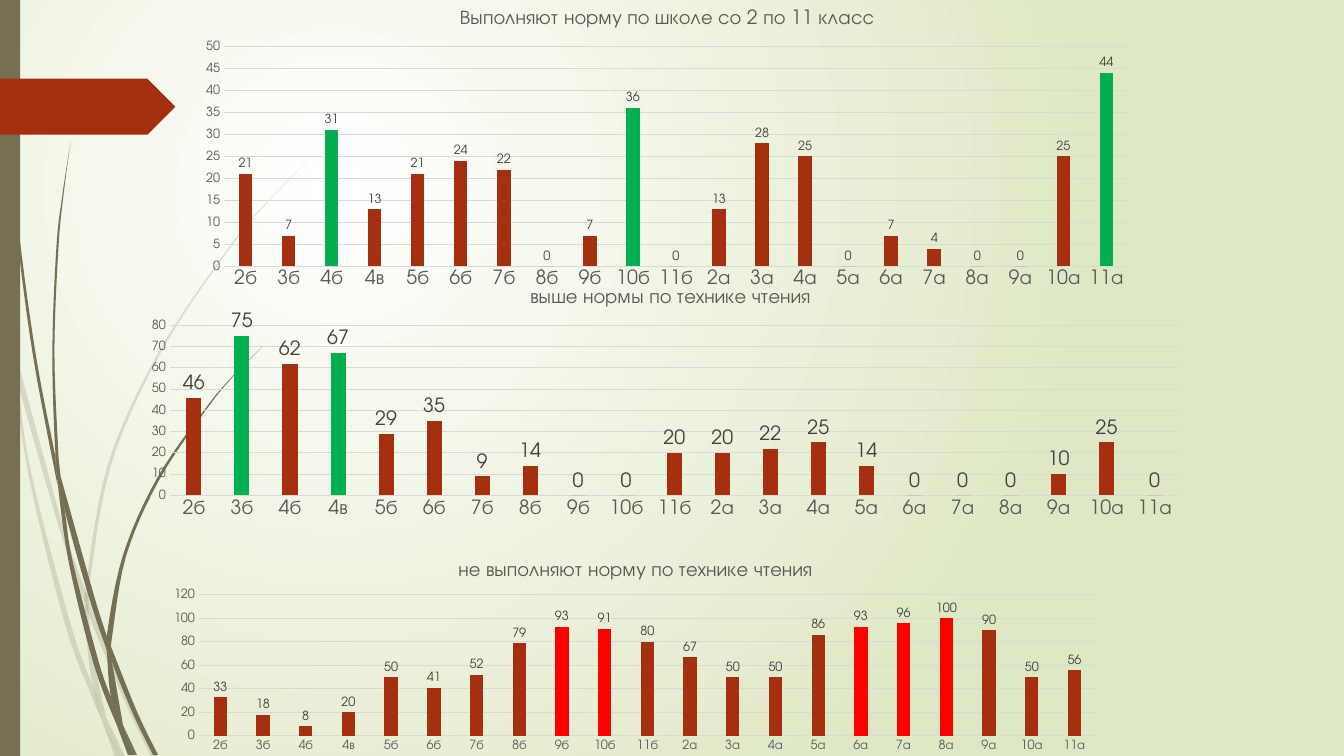
from lxml import etree
from pptx import Presentation
from pptx.chart.data import CategoryChartData
from pptx.dml.color import RGBColor
from pptx.enum.chart import XL_CHART_TYPE, XL_LABEL_POSITION, XL_TICK_MARK
from pptx.enum.shapes import MSO_SHAPE
from pptx.oxml import parse_xml
from pptx.oxml.ns import nsdecls, qn
from pptx.util import Pt

COLORS = {
    name: RGBColor.from_string(value)
    for name, value in {
        "white": "FFFFFF", "pale green": "DFE8C4", "olive": "766F54",
        "rust": "A53010", "green": "00B050", "red": "FF0000",
        "grid": "D9D9D9", "axis": "595959", "label": "404040",
    }.items()
}
FONT = "TeX Gyre Adventor"
CLASSES = [f"{grade}б" for grade in range(2, 12)] + [f"{grade}а" for grade in range(2, 12)]
CLASSES.insert(3, "4в")


def smooth(points, steps=6):
    """Return a Catmull-Rom curve through the points, in EMU."""
    padded = [points[0], *points, points[-1]]
    curve = []
    for a, b, c, d in zip(padded, padded[1:], padded[2:], padded[3:]):
        for step in range(steps):
            t = step / steps
            curve.append(tuple(
                Pt(0.5 * (2 * q + (r - p) * t + (2 * p - 5 * q + 4 * r - s) * t**2
                          + (3 * q - p - 3 * r + s) * t**3))
                for p, q, r, s in zip(a, b, c, d)
            ))
    return curve + [tuple(Pt(value) for value in points[-1])]


def write(frame, text, size, color):
    span = frame.paragraphs[0].add_run()
    span.text = text
    span.font.name = FONT
    span.font.size = Pt(size)
    span.font.bold = False
    span.font.color.rgb = COLORS[color]


deck = Presentation()
deck.slide_width, deck.slide_height = Pt(960), Pt(540)
page = deck.slides.add_slide(deck.slide_layouts[6])

# Background: glow centred in the upper left
backdrop = page.background.fill
backdrop.gradient()
for stop, color, position in zip(backdrop.gradient_stops, ("white", "pale green"), (0, 1)):
    stop.color.rgb = COLORS[color]
    stop.position = position
gradient = page._element.find(".//" + qn("a:gradFill"))
gradient.replace(gradient.find(qn("a:lin")), parse_xml(
    f'<a:path {nsdecls("a")} path="circle">'
    '<a:fillToRect l="50000" t="50000" r="100000" b="100000"/></a:path>'))

# Grass pieces: left edge downwards, right edge upwards
FAINT_GRASS = [
    ([(0, 215.3), (7.2, 247.7), (7.9, 252)], [(6.5, 231.8), (0, 203)]),
    ([(10.1, 248.4), (12.2, 270.7), (41.8, 375.8), (60.5, 431.3)],
     [(61.2, 421.9), (44.6, 374.4), (10.1, 248.4)]),
    ([(63.4, 429.1), (63.4, 439.2), (88.6, 499.7), (108, 540.7)],
     [(111.6, 540.7), (91.4, 498.2), (66.2, 437), (63.4, 429.1)]),
    ([(75.6, 511.9), (85.7, 540.7)], [(89.3, 540.7)]),
    ([(7.9, 252), (20.2, 338.4), (46.8, 447.1), (66.2, 499), (72.7, 514.1)],
     [(67, 491.8), (50.4, 445.7), (22.3, 337.7), (12.2, 270.7), (7.9, 252)]),
    ([(60.5, 431.3), (62.6, 465.1), (67, 491.8), (75.6, 511.9)],
     [(65.5, 465.1), (63.4, 439.2), (60.5, 431.3)]),
    ([(224.6, 110.2), (193, 141.8), (164.2, 175.7), (113.8, 250.6), (77, 331.9),
      (61.2, 420.5), (63.4, 429.1)],
     [(63.4, 420.5), (79.2, 332.6), (115.2, 251.3), (164.9, 176.4), (193, 142.6),
      (224.6, 110.2)]),
    ([(72.7, 514.1), (82.1, 540.7)], [(85.7, 540.7)]),
    ([(61.2, 421.9), (60.5, 431.3), (63.4, 439.2)], [(63.4, 429.1)]),
    ([(67, 491.8), (72.7, 514.1), (85.7, 540.7)], [(75.6, 511.9)]),
]
DARK_GRASS = [
    ([(2.2, 0), (5, 79.2), (12.2, 167.8), (23.8, 255.6), (41, 346.3)],
     [(39.6, 326.2), (25.9, 255.6), (13.7, 167), (5.8, 78.5), (2.9, 0)]),
    ([(43.2, 339.8), (46.1, 363.6), (63.4, 426.2), (76.3, 464.4)],
     [(76.3, 454.3), (67, 424.8), (43.2, 339.8)]),
    ([(79.2, 461.5), (79.9, 472.3), (95, 509.8), (109.4, 539.3)],
     [(113, 539.3), (97.9, 508.3), (79.2, 461.5)]),
    ([(41, 343.4), (49, 401), (67, 474.5), (84.2, 519.8)],
     [(79.2, 497.5), (70.6, 473), (51.8, 400.3), (46.1, 363.6), (41, 343.4)]),
    ([(50.4, 101.5), (44.6, 139), (40.3, 176.4), (37.4, 251.3), (39.6, 323.3), (43.2, 339.8)],
     [(41.8, 326.2), (38.9, 251.3), (41.8, 176.4), (45.4, 139), (50.4, 101.5)]),
    ([(87.8, 517.7), (95.8, 539.3)], [(97.9, 539.3)]),
    ([(39.6, 323.3), (39.6, 326.2), (41, 343.4), (46.1, 363.6)], [(43.2, 339.8)]),
    ([(187.2, 247.7), (166.3, 268.6), (146.9, 291.6), (112.3, 341.3), (87.8, 396.7),
      (76.3, 454.3), (79.2, 461.5)],
     [(79.9, 455.8), (90, 397.4), (113.8, 342.7), (147.6, 292.3), (166.3, 269.3),
      (187.2, 247.7)]),
    ([(84.2, 519.8), (91.4, 539.3)], [(94.3, 539.3)]),
    ([(76.3, 464.4), (79.2, 497.5), (87.8, 517.7)], [(79.9, 472.3), (76.3, 464.4)]),
    ([(76.3, 454.3), (76.3, 464.4), (79.9, 472.3)], [(79.2, 461.5)]),
    ([(79.2, 497.5), (84.2, 519.8), (93.6, 539.3)], [(95.8, 539.3), (87.8, 517.7)]),
]
for pieces, opacity in ((FAINT_GRASS, 20), (DARK_GRASS, 100)):
    for left_edge, right_edge in pieces:
        outline = smooth(left_edge) + smooth(right_edge)
        builder = page.shapes.build_freeform(*outline[0], scale=1.0)
        builder.add_line_segments(outline[1:], close=True)
        blade = builder.convert_to_shape()
        blade.shadow.inherit = False
        blade.fill.solid()
        blade.fill.fore_color.rgb = COLORS["olive"]
        blade.line.fill.background()
        tint = blade._element.spPr.find(".//" + qn("a:srgbClr"))
        etree.SubElement(tint, qn("a:alpha")).set("val", str(opacity * 1000))

# Side strip and page flag
for preset, color, place in [
    (MSO_SHAPE.RECTANGLE, "olive", (0, 0, 14.4, 540)),
    (MSO_SHAPE.PENTAGON, "rust", (0, 56.2, 125.3, 40)),
]:
    box = page.shapes.add_shape(preset, *map(Pt, place))
    box.shadow.inherit = False
    box.fill.solid()
    box.fill.fore_color.rgb = COLORS[color]
    box.line.fill.background()

# Reading charts; frame and plot are left, top, width, height
CHARTS = [
    dict(title="не выполняют норму по технике чтения",
         frame=(110.9, 390.2, 686.2, 149.8), plot=(142.1, 425, 640.7, 100.7),
         values=[33, 18, 8, 20, 50, 41, 52, 79, 93, 91, 80, 67, 50, 50, 86, 93, 96, 100, 90, 50, 56],
         accent="red", accented=(8, 9, 15, 16, 17),
         top=120, step=20, class_size=9, label_size=9),
    dict(title="выше нормы по технике чтения",
         frame=(93.6, 195.1, 763.9, 178.6), plot=(121.4, 232.5, 720.7, 121.4),
         values=[46, 75, 62, 67, 29, 35, 9, 14, 0, 0, 20, 20, 22, 25, 14, 0, 0, 0, 10, 25, 0],
         accent="green", accented=(1, 3), title_place=(0.37, 0.04),
         top=80, step=10, class_size=14, label_size=14),
    dict(title="Выполняют норму по школе со 2 по 11 класс",
         frame=(133.9, -5, 685.4, 216), plot=(160, 33.2, 645.7, 157.1),
         values=[21, 7, 31, 13, 21, 24, 22, 0, 7, 36, 0, 13, 28, 25, 0, 7, 4, 0, 0, 25, 44],
         accent="green", accented=(2, 9, 20),
         top=50, step=5, class_size=14, label_size=9),
]
for item in CHARTS:
    data = CategoryChartData(number_format="0")
    data.categories = CLASSES
    data.add_series("Series 1", item["values"])
    chart = page.shapes.add_chart(
        XL_CHART_TYPE.COLUMN_CLUSTERED, *map(Pt, item["frame"]), data).chart
    chart.has_legend = False
    chart.font.name = FONT
    chart.font.size = Pt(10)
    chart.has_title = True
    write(chart.chart_title.text_frame, item["title"], size=14, color="axis")
    chart.chart_title.include_in_layout = False

    values, classes = chart.value_axis, chart.category_axis
    for axis, size in ((values, 9), (classes, item["class_size"])):
        axis.major_tick_mark = axis.minor_tick_mark = XL_TICK_MARK.NONE
        axis.tick_labels.font.name = FONT
        axis.tick_labels.font.size = Pt(size)
        axis.tick_labels.font.color.rgb = COLORS["axis"]
    values.minimum_scale, values.maximum_scale = 0, item["top"]
    values.major_unit = item["step"]
    values.format.line.fill.background()
    for line in (classes.format.line, values.major_gridlines.format.line):
        line.color.rgb = COLORS["grid"]
        line.width = Pt(0.75)

    columns = chart.plots[0]
    columns.vary_by_categories = False
    columns.gap_width, columns.overlap = 219, -27
    series = columns.series[0]
    series.format.fill.solid()
    series.format.fill.fore_color.rgb = COLORS["rust"]
    for index in item["accented"]:
        fill = series.points[index].format.fill
        fill.solid()
        fill.fore_color.rgb = COLORS[item["accent"]]
    labels = series.data_labels
    labels.show_value = True
    labels.position = XL_LABEL_POSITION.OUTSIDE_END
    labels.number_format, labels.number_format_is_linked = "0", False
    labels.font.name, labels.font.size = FONT, Pt(item["label_size"])
    labels.font.color.rgb = COLORS["label"]

    left, top, width, height = item["frame"]
    x, y, w, h = item["plot"]
    places = [("c:plotArea", 0, '<c:layoutTarget val="inner"/>', {
        "x": (x - left) / width, "y": (y - top) / height, "w": w / width, "h": h / height})]
    if "title_place" in item:
        places.append(("c:title", 1, "", dict(zip("xy", item["title_place"]))))
    for tag, index, target, parts in places:
        area = chart._chartSpace.find(".//" + qn(tag))
        for layout in area.findall(qn("c:layout")):
            area.remove(layout)
        area.insert(index, parse_xml(
            f'<c:layout {nsdecls("c")}><c:manualLayout>{target}'
            '<c:xMode val="edge"/><c:yMode val="edge"/>'
            + "".join(f'<c:{name} val="{part:.4f}"/>' for name, part in parts.items())
            + "</c:manualLayout></c:layout>"))

deck.save("out.pptx")
